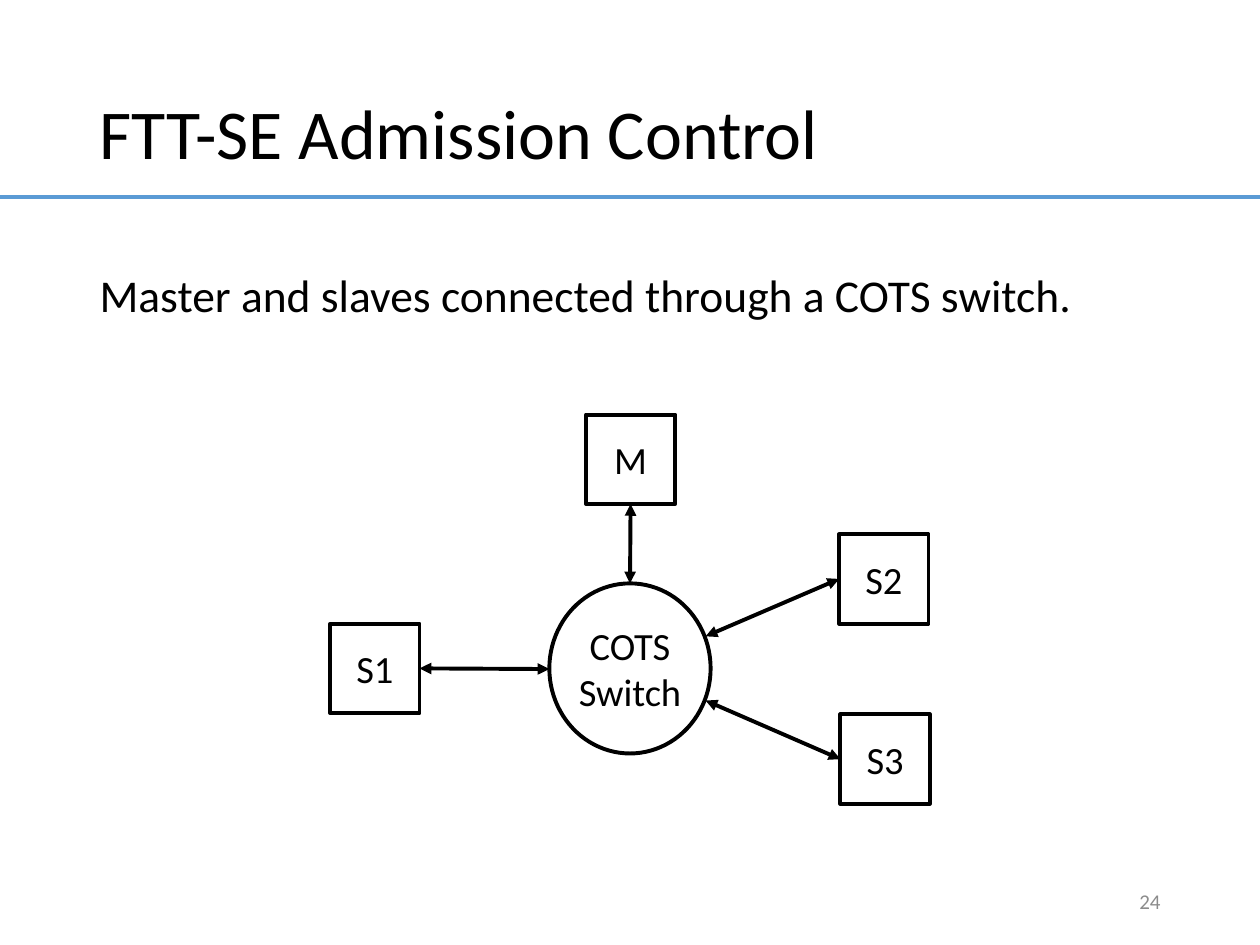
from lxml.etree import SubElement
from pptx import Presentation
from pptx.dml.color import RGBColor
from pptx.enum.shapes import MSO_CONNECTOR, MSO_SHAPE
from pptx.enum.text import MSO_ANCHOR, MSO_AUTO_SIZE, PP_ALIGN
from pptx.oxml.ns import qn
from pptx.util import Inches, Pt

BLACK = RGBColor(0x00, 0x00, 0x00)
BLUE = RGBColor(0x5B, 0x9B, 0xD5)
GRAY = RGBColor(0x8C, 0x8C, 0x8C)
SIDE = 0.71
TOP, LEFT, BOTTOM = 0, 1, 2
RIGHT = 3


def write(shape, text, size=22, color=BLACK, align=PP_ALIGN.CENTER,
          anchor=MSO_ANCHOR.MIDDLE, spacing=None, before=None):
    """Fill a shape with one paragraph for each line of text."""
    frame = shape.text_frame
    frame.text = text
    frame.word_wrap = True
    frame.auto_size = MSO_AUTO_SIZE.NONE
    frame.vertical_anchor = anchor
    for para in frame.paragraphs:
        para.alignment = align
        para.line_spacing = spacing
        para.space_before = before
        for run in para.runs:
            run.font.name = "Calibri"
            run.font.size = Pt(size)
            run.font.color.rgb = color


def place(shape, *area):
    shape.left, shape.top, shape.width, shape.height = map(Inches, area)


class Painter:
    def __init__(self, slide, width=2.25):
        self.slide = slide
        self.shapes = slide.shapes
        self.width = Pt(width)

    def title(self, text, *area):
        shape = self.shapes.title
        place(shape, *area)
        write(shape, text, size=40, align=PP_ALIGN.LEFT, spacing=0.9)

    def body(self, text, *area):
        shape = self.slide.placeholders[1]
        place(shape, *area)
        write(shape, text, size=26, align=PP_ALIGN.LEFT,
              anchor=MSO_ANCHOR.TOP, spacing=0.9, before=Pt(10))
        for para in shape.text_frame.paragraphs:
            props = para._p.get_or_add_pPr()
            props.set("marL", "0")
            props.set("indent", "0")
            SubElement(props, qn("a:buNone"))

    def label(self, text, *area, **style):
        shape = self.shapes.add_textbox(*map(Inches, area))
        write(shape, text, **style)

    def outline(self, kind, *area):
        shape = self.shapes.add_shape(kind, *map(Inches, area))
        shape.shadow.inherit = False
        shape.fill.background()
        shape.line.color.rgb = BLACK
        shape.line.width = self.width
        return shape

    def node(self, text, left, top):
        shape = self.outline(MSO_SHAPE.RECTANGLE, left, top, SIDE, SIDE)
        write(shape, text)
        return shape

    def line(self, start, end, color=BLACK):
        ends = map(Inches, (*start, *end))
        line = self.shapes.add_connector(MSO_CONNECTOR.STRAIGHT, *ends)
        line.line.color.rgb = color
        line.line.width = self.width
        SubElement(line._element.spPr, qn("a:effectLst"))
        return line

    def link(self, node, side, end):
        """Draw a two-headed arrow from a node's side to a point."""
        line = self.line(end, end)
        line.begin_connect(node, side)
        stroke = line.line._get_or_add_ln()
        for tag in ("a:headEnd", "a:tailEnd"):
            SubElement(stroke, qn(tag), type="triangle")


def main():
    deck = Presentation()
    deck.slide_width, deck.slide_height = Inches(10), Inches(7.5)
    slide = deck.slides.add_slide(deck.slide_layouts[1])
    paint = Painter(slide)

    paint.line((0, 1.56), (10, 1.56), BLUE)
    paint.body("Master and slaves connected through a COTS switch.",
               0.69, 2.12, 8.62, 0.5)
    paint.title("FTT-SE Admission Control", 0.69, 0.33, 8.62, 1.51)
    paint.label("24", 7.06, 6.95, 2.25, 0.4,
                size=12, color=GRAY, align=PP_ALIGN.RIGHT)

    paint.outline(MSO_SHAPE.OVAL, 4.36, 4.63, 1.28, 1.35)
    paint.label("COTS\nSwitch", 4.36, 4.82, 1.28, 0.97)

    # Name, left, top, joined side, point on the switch
    nodes = [
        ("M", 4.65, 3.29, BOTTOM, (5, 4.63)),
        ("S1", 2.62, 4.95, RIGHT, (4.36, 5.31)),
        ("S2", 6.66, 4.24, LEFT, (5.6, 5.05)),
        ("S3", 6.67, 5.67, LEFT, (5.6, 5.56)),
    ]
    for name, left, top, side, end in nodes:
        paint.link(paint.node(name, left, top), side, end)

    deck.save("out.pptx")


if __name__ == "__main__":
    main()
